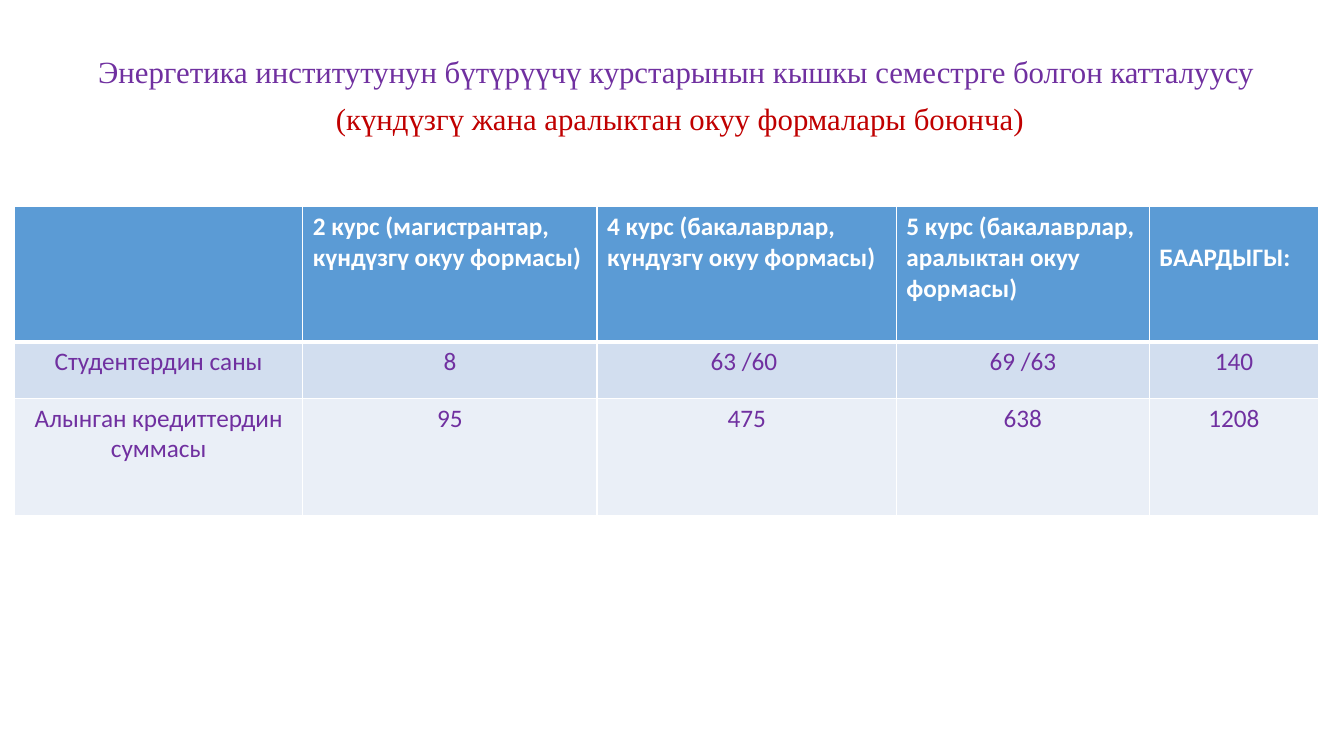
from lxml import etree
from pptx import Presentation
from pptx import util as u
from pptx.dml.color import RGBColor
from pptx.enum import text
from pptx.oxml import ns

Pt = u.Pt
hues = {
    "violet": "7030A0", "red": "C00000", "white": "FFFFFF",
    "head": "5B9BD5", "band": "D2DEEF", "pale": "EAEFF7",
}


def tint(name):
    return RGBColor.from_string(hues[name])


def edge(cell, sides):
    """Draw white cell borders; sides maps a side letter to a width."""
    props = cell._tc.get_or_add_tcPr()
    for spot, (side, width) in enumerate(sides.items()):
        line = etree.Element(ns.qn("a:ln" + side), w=str(Pt(width)))
        fill = etree.SubElement(line, ns.qn("a:solidFill"))
        etree.SubElement(fill, ns.qn("a:srgbClr"), val=hues["white"])
        props.insert(spot, line)


deck = Presentation()
deck.slide_width, deck.slide_height = Pt(960), Pt(540)
slide = deck.slides.add_slide(deck.slide_layouts[5])

# Title in two colours
title = slide.shapes.title
title.left, title.top = Pt(33.8), Pt(36.7)
title.width, title.height = Pt(903.6), Pt(69.8)
frame = title.text_frame
frame.word_wrap = True
frame.auto_size = text.MSO_AUTO_SIZE.NONE
frame.vertical_anchor = text.MSO_ANCHOR.TOP
frame.text = (
    "Энергетика институтунун бүтүрүүчү курстарынын кышкы семестрге болгон катталуусу \n"
    "(күндүзгү жана аралыктан окуу формалары боюнча)"
)
for para, hue in zip(frame.paragraphs, ("violet", "red")):
    para.alignment = text.PP_ALIGN.CENTER
    para.line_spacing = 0.9
    para.space_before = Pt(10)
    para.font.name = "Times New Roman"
    para.font.size = Pt(22)
    para.font.color.rgb = tint(hue)

# Table content and sizes
rows = [
    ["", "2 курс (магистрантар, күндүзгү окуу формасы)",
     "4 курс (бакалаврлар, күндүзгү окуу формасы)",
     "5 курс (бакалаврлар, аралыктан окуу формасы)", "БААРДЫГЫ:"],
    ["Студентердин саны", "8", "63 /60 ", "69 /63", "140"],
    ["Алынган кредиттердин суммасы", "95", "475", "638", "1208"],
]
widths = [205.9, 210.2, 213.8, 180.7, 121]
heights = [96.5, 40.3, 84.2]
fills = ["head", "band", "pale"]

table = slide.shapes.add_table(
    len(rows), len(widths), Pt(10.4), Pt(147.6), Pt(sum(widths)), Pt(sum(heights))
).table
for col, width in zip(table.columns, widths):
    col.width = Pt(width)
for row, height in zip(table.rows, heights):
    row.height = Pt(height)

# Cells
for r, row in enumerate(rows):
    head = r == 0
    for c, words in enumerate(row):
        cell = table.cell(r, c)
        cell.text = words
        cell.fill.solid()
        cell.fill.fore_color.rgb = tint(fills[r])
        edge(cell, {"L": 1, "R": 1, "T": 3 if r == 1 else 1, "B": 3 if head else 1})
        para = cell.text_frame.paragraphs[0]
        para.alignment = text.PP_ALIGN.LEFT if head else text.PP_ALIGN.CENTER
        para.font.name = "Calibri"
        para.font.size = Pt(18)
        para.font.bold = head
        para.font.color.rgb = tint("white" if head else "violet")

# The total heading sits one line lower
table.cell(0, 4).margin_top = Pt(25.6)

deck.save("out.pptx")
